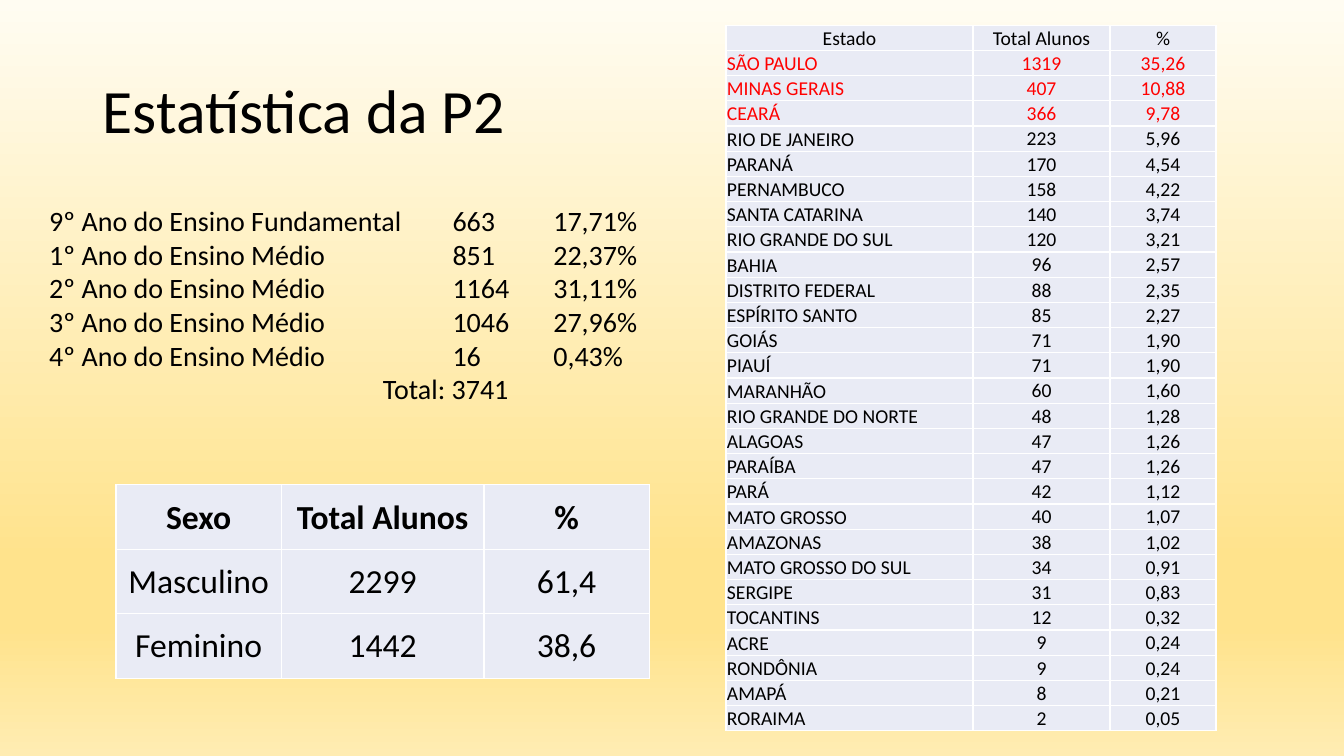
from copy import deepcopy

from lxml import etree
from pptx import Presentation
from pptx.dml.color import RGBColor
from pptx.enum.text import MSO_ANCHOR, MSO_AUTO_SIZE, PP_ALIGN
from pptx.oxml.ns import qn
from pptx.util import Inches, Pt

LEFT, CENTER = PP_ALIGN.LEFT, PP_ALIGN.CENTER
MIDDLE, BOTTOM = MSO_ANCHOR.MIDDLE, MSO_ANCHOR.BOTTOM
FIT_SHAPE = MSO_AUTO_SIZE.SHAPE_TO_FIT_TEXT

BLACK = RGBColor(0x00, 0x00, 0x00)
RED = RGBColor(0xFF, 0x00, 0x00)
WHITE = RGBColor(0xFF, 0xFF, 0xFF)
CELL_FILL = RGBColor(0xE9, 0xEB, 0xF5)
GOLD = RGBColor(0xFF, 0xE3, 0x8C)
BACKGROUND_STOPS = [
    (0, RGBColor(0xFF, 0xFC, 0xF2)),
    (0.74, GOLD),
    (0.83, GOLD),
    (1, RGBColor(0xFF, 0xEC, 0xB2)),
]

GRADES = [
    "9º Ano do Ensino Fundamental\t663\t17,71%",
    "1º Ano do Ensino Médio\t851\t22,37%",
    "2º Ano do Ensino Médio\t1164\t31,11%",
    "3º Ano do Ensino Médio\t1046\t27,96%",
    "4º Ano do Ensino Médio\t16\t0,43%",
]
GRADES_TOTAL = "Total: 3741"

SEXES = [
    ("Sexo", "Total Alunos", "%"),
    ("Masculino", "2299", "61,4"),
    ("Feminino", "1442", "38,6"),
]

STATES = [
    ("Estado", "Total Alunos", "%"),
    ("SÃO PAULO", "1319", "35,26"),
    ("MINAS GERAIS", "407", "10,88"),
    ("CEARÁ", "366", "9,78"),
    ("RIO DE JANEIRO", "223", "5,96"),
    ("PARANÁ", "170", "4,54"),
    ("PERNAMBUCO", "158", "4,22"),
    ("SANTA CATARINA", "140", "3,74"),
    ("RIO GRANDE DO SUL", "120", "3,21"),
    ("BAHIA", "96", "2,57"),
    ("DISTRITO FEDERAL", "88", "2,35"),
    ("ESPÍRITO SANTO", "85", "2,27"),
    ("GOIÁS", "71", "1,90"),
    ("PIAUÍ", "71", "1,90"),
    ("MARANHÃO", "60", "1,60"),
    ("RIO GRANDE DO NORTE", "48", "1,28"),
    ("ALAGOAS", "47", "1,26"),
    ("PARAÍBA", "47", "1,26"),
    ("PARÁ", "42", "1,12"),
    ("MATO GROSSO", "40", "1,07"),
    ("AMAZONAS", "38", "1,02"),
    ("MATO GROSSO DO SUL", "34", "0,91"),
    ("SERGIPE", "31", "0,83"),
    ("TOCANTINS", "12", "0,32"),
    ("ACRE", "9", "0,24"),
    ("RONDÔNIA", "9", "0,24"),
    ("AMAPÁ", "8", "0,21"),
    ("RORAIMA", "2", "0,05"),
]
HIGHLIGHTED_ROWS = range(1, 4)


class SlideBuilder:
    font_name = "Calibri"

    def __init__(self, slide):
        self.slide = slide

    def format_text(self, paragraph, size, color=BLACK, bold=False, alignment=LEFT):
        paragraph.alignment = alignment
        for run in paragraph.runs:
            run.font.name = self.font_name
            run.font.size = Pt(size)
            run.font.bold = bold
            run.font.color.rgb = color

    def background(self, stops):
        fill = self.slide.background.fill
        fill.gradient()
        fill.gradient_angle = 270
        stop_list = next(self.slide.element.iter(qn("a:gsLst")))
        while len(stop_list) < len(stops):
            stop_list.append(deepcopy(stop_list[0]))
        for stop, (position, color) in zip(fill.gradient_stops, stops):
            stop.position = position
            stop.color.rgb = color

    def title(self, text, left, top, width, height):
        shape = self.slide.shapes.title
        shape.left, shape.top = Inches(left), Inches(top)
        shape.width, shape.height = Inches(width), Inches(height)
        shape.text_frame.text = text
        shape.text_frame.vertical_anchor = MIDDLE
        paragraph = shape.text_frame.paragraphs[0]
        paragraph.line_spacing = 0.9
        self.format_text(paragraph, 44)

    def tabbed_list(self, lines, total, left, top, width, height, tabs, total_indent):
        shape = self.slide.shapes.add_textbox(
            Inches(left), Inches(top), Inches(width), Inches(height))
        text_frame = shape.text_frame
        text_frame.word_wrap = True
        text_frame.auto_size = FIT_SHAPE
        text_frame.text = "\n".join([*lines, total])
        for paragraph in text_frame.paragraphs:
            self.format_text(paragraph, 20)
            properties = paragraph._p.get_or_add_pPr()
            tab_list = etree.SubElement(properties, qn("a:tabLst"))
            for position in tabs:
                etree.SubElement(tab_list, qn("a:tab"), pos=str(Inches(position)), algn="l")
        properties.set("marL", str(Inches(total_indent)))

    def cell_borders(self, cell):
        properties = cell._tc.get_or_add_tcPr()
        for side in ("lnL", "lnR", "lnT", "lnB"):
            line = etree.SubElement(properties, qn(f"a:{side}"), w=str(Pt(1)))
            fill = etree.SubElement(line, qn("a:solidFill"))
            etree.SubElement(fill, qn("a:srgbClr"), val=str(WHITE))

    def table(self, rows, left, top, widths, row_height, size,
              bold_header=False, left_names=False, red_rows=()):
        table = self.slide.shapes.add_table(
            len(rows), len(widths), Inches(left), Inches(top),
            Inches(sum(widths)), Inches(row_height * len(rows))).table
        table.first_row = False
        table.horz_banding = False
        for column, width in zip(table.columns, widths):
            column.width = Inches(width)
        for row_index, values in enumerate(rows):
            table.rows[row_index].height = Inches(row_height)
            for column_index, value in enumerate(values):
                is_name = left_names and row_index > 0 and column_index == 0
                cell = table.cell(row_index, column_index)
                cell.text_frame.text = value
                cell.margin_left = cell.margin_right = cell.margin_top = Inches(0.01)
                cell.margin_bottom = 0
                cell.vertical_anchor = BOTTOM if is_name else MIDDLE
                self.cell_borders(cell)
                cell.fill.solid()
                cell.fill.fore_color.rgb = CELL_FILL
                self.format_text(
                    cell.text_frame.paragraphs[0], size,
                    color=RED if row_index in red_rows else BLACK,
                    bold=bold_header and row_index == 0,
                    alignment=LEFT if is_name else CENTER)


def main():
    presentation = Presentation()
    presentation.slide_width = Inches(13.33)
    presentation.slide_height = Inches(7.5)
    builder = SlideBuilder(presentation.slides.add_slide(presentation.slide_layouts[5]))
    builder.background(BACKGROUND_STOPS)
    builder.title("Estatística da P2", 0.92, 0.4, 11.5, 1.45)
    builder.tabbed_list(GRADES, GRADES_TOTAL, 0.39, 1.97, 7.37, 2.12,
                        tabs=(4, 5), total_indent=3.31)
    builder.table(SEXES, 1.15, 4.81, (1.64, 2.01, 1.64), 0.64, 24, bold_header=True)
    builder.table(STATES, 7.2, 0.25, (2.45, 1.36, 1.05), 0.25, 14,
                  left_names=True, red_rows=HIGHLIGHTED_ROWS)
    presentation.save("out.pptx")


if __name__ == "__main__":
    main()
